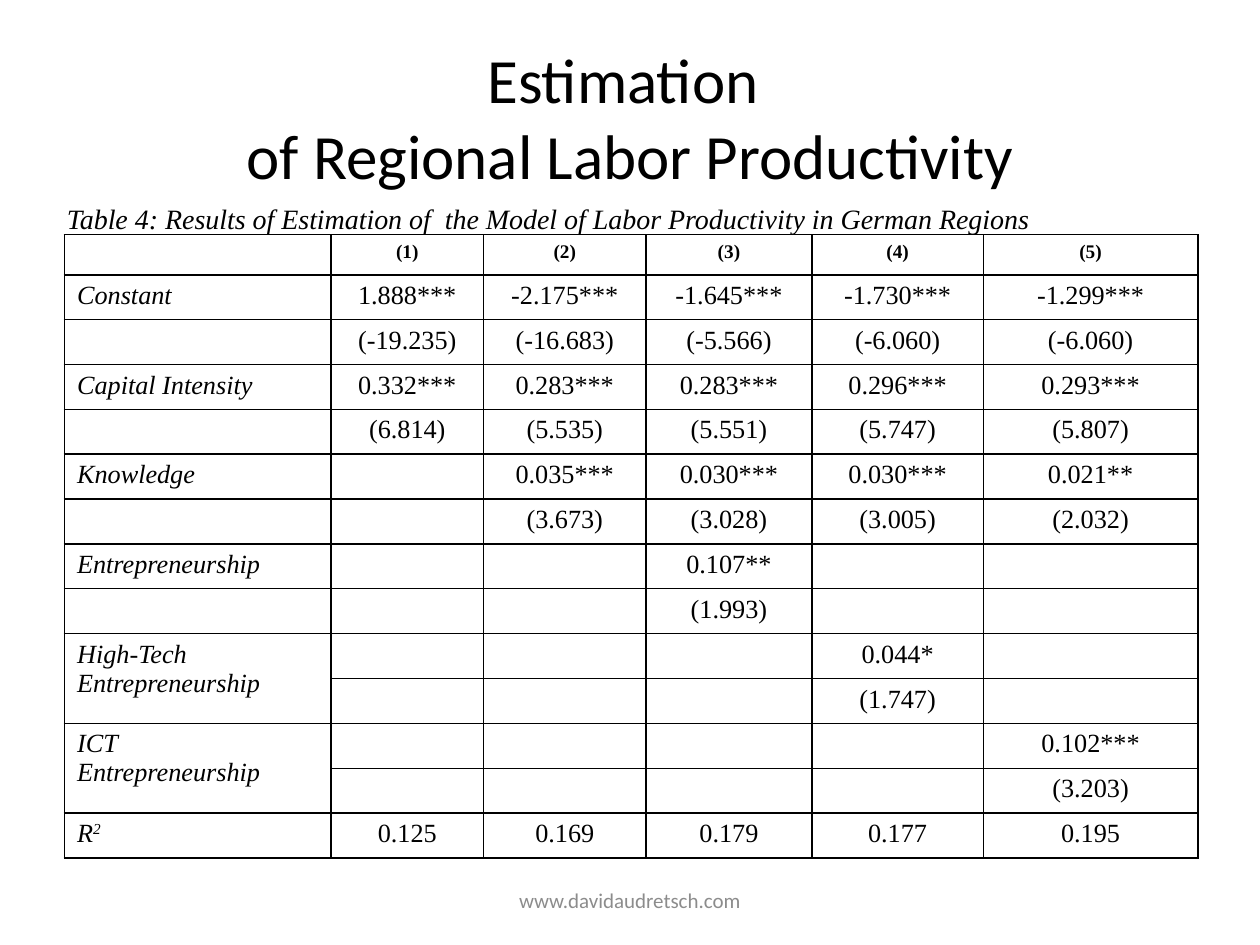
from dataclasses import dataclass

from lxml.etree import SubElement
from pptx import Presentation
from pptx.dml.color import RGBColor
from pptx.enum.text import MSO_ANCHOR, PP_ALIGN
from pptx.oxml.ns import qn
from pptx.util import Cm, Pt


@dataclass(frozen=True)
class Theme:
    black: RGBColor = RGBColor(0x00, 0x00, 0x00)
    gray: RGBColor = RGBColor(0x8C, 0x8C, 0x8C)
    sans: str = "Calibri"
    serif: str = "Times New Roman"
    title_size: float = 36
    caption_size: float = 16
    body_size: float = 15
    footer_size: float = 12
    header_size: float = 11
    thick: float = 1
    thin: float = 0.75


@dataclass(frozen=True)
class TextStyle:
    font_name: str
    size: float
    color: RGBColor
    alignment: PP_ALIGN
    bold: bool = False
    italic: bool = False


@dataclass(frozen=True)
class Label:
    text: str
    left: float
    top: float
    width: float
    height: float
    style: TextStyle


@dataclass(frozen=True)
class Estimate:
    name: str
    coefficients: tuple[str, ...]
    t_values: tuple[str, ...]
    merged: bool = False


THEME = Theme()
HEADER = TextStyle(THEME.serif, THEME.header_size, THEME.black, PP_ALIGN.CENTER, bold=True)
NAME = TextStyle(THEME.serif, THEME.body_size, THEME.black, PP_ALIGN.JUSTIFY, italic=True)
VALUE = TextStyle(THEME.serif, THEME.body_size, THEME.black, PP_ALIGN.CENTER)

LABELS = (
    Label("www.davidaudretsch.com", 8.68, 17.65, 8.04, 1.01,
          TextStyle(THEME.sans, THEME.footer_size, THEME.gray, PP_ALIGN.CENTER)),
    Label("Estimation \vof Regional Labor Productivity", 1.27, 0.76, 22.86, 3.18,
          TextStyle(THEME.sans, THEME.title_size, THEME.black, PP_ALIGN.CENTER)),
    Label("Table 4: Results of Estimation of  the Model of Labor Productivity in German Regions",
          1.1, 3.94, 22.86, 0.94,
          TextStyle(THEME.serif, THEME.caption_size, THEME.black, PP_ALIGN.LEFT, italic=True)),
)

MODELS = ("(1)", "(2)", "(3)", "(4)", "(5)")
ESTIMATES = (
    Estimate("Constant",
             ("1.888***", "-2.175***", "-1.645***", "-1.730***", "-1.299***"),
             ("(-19.235)", "(-16.683)", "(-5.566)", "(-6.060)", "(-6.060)")),
    Estimate("Capital Intensity",
             ("0.332***", "0.283***", "0.283***", "0.296***", "0.293***"),
             ("(6.814)", "(5.535)", "(5.551)", "(5.747)", "(5.807)")),
    Estimate("Knowledge",
             ("", "0.035***", "0.030***", "0.030***", "0.021**"),
             ("", "(3.673)", "(3.028)", "(3.005)", "(2.032)")),
    Estimate("Entrepreneurship",
             ("", "", "0.107**", "", ""), ("", "", "(1.993)", "", "")),
    Estimate("High-Tech\nEntrepreneurship",
             ("", "", "", "0.044*", ""), ("", "", "", "(1.747)", ""), merged=True),
    Estimate("ICT\nEntrepreneurship",
             ("", "", "", "", "0.102***"), ("", "", "", "", "(3.203)"), merged=True),
)
R_SQUARED = ("0.125", "0.169", "0.179", "0.177", "0.195")

TABLE_LEFT, TABLE_TOP, TABLE_HEIGHT = 1.3, 4.73, 12.57
HEADER_HEIGHT = 0.81
COLUMN_WIDTHS = (5.37, 3.08, 3.27, 3.35, 3.45, 4.33)
COLUMN_EDGES = (THEME.thick, THEME.thick, THEME.thin, THEME.thick,
                THEME.thin, THEME.thin, THEME.thick)


def write_text(text_frame, text: str, style: TextStyle) -> None:
    text_frame.text = text
    for paragraph in text_frame.paragraphs:
        paragraph.alignment = style.alignment
        font = paragraph.font
        font.name, font.size = style.font_name, Pt(style.size)
        font.bold, font.italic = style.bold, style.italic
        font.color.rgb = style.color
        if not text:
            paragraph._p.get_or_add_endParaRPr().set("sz", str(int(style.size * 100)))


def add_label(slide, label: Label) -> None:
    shape = slide.shapes.add_textbox(
        Cm(label.left), Cm(label.top), Cm(label.width), Cm(label.height))
    shape.text_frame.word_wrap = True
    shape.text_frame.vertical_anchor = MSO_ANCHOR.MIDDLE
    write_text(shape.text_frame, label.text, label.style)


def draw_borders(cell, weights: dict[str, float]) -> None:
    properties = cell._tc.get_or_add_tcPr()
    for position, (side, weight) in enumerate(weights.items()):
        line = properties.makeelement(qn(f"a:{side}"), {"w": str(Pt(weight))})
        fill = SubElement(line, qn("a:solidFill"))
        SubElement(fill, qn("a:srgbClr"), {"val": str(THEME.black)})
        properties.insert(position, line)


def table_rows() -> list[tuple[str, ...]]:
    rows = [("", *MODELS)]
    for estimate in ESTIMATES:
        rows += [(estimate.name, *estimate.coefficients), ("", *estimate.t_values)]
    return rows + [("R", *R_SQUARED)]


def edge_weight(edge: int, row_count: int) -> float:
    return THEME.thick if edge % 2 or edge == row_count else THEME.thin


def add_results_table(slide) -> None:
    rows = table_rows()
    row_count = len(rows)
    table = slide.shapes.add_table(
        row_count, len(COLUMN_WIDTHS), Cm(TABLE_LEFT), Cm(TABLE_TOP),
        Cm(sum(COLUMN_WIDTHS)), Cm(TABLE_HEIGHT)).table
    table.first_row = table.horz_banding = False
    for column, width in zip(table.columns, COLUMN_WIDTHS):
        column.width = Cm(width)
    body_height = Cm((TABLE_HEIGHT - HEADER_HEIGHT) / (row_count - 1))
    for row_index, values in enumerate(rows):
        table.rows[row_index].height = body_height if row_index else Cm(HEADER_HEIGHT)
        for column_index, value in enumerate(values):
            cell = table.cell(row_index, column_index)
            style = HEADER if row_index == 0 else VALUE if column_index else NAME
            write_text(cell.text_frame, value, style)
            cell.fill.background()
            draw_borders(cell, {
                "lnL": COLUMN_EDGES[column_index],
                "lnR": COLUMN_EDGES[column_index + 1],
                "lnT": edge_weight(row_index, row_count),
                "lnB": edge_weight(row_index + 1, row_count)})
    for index, estimate in enumerate(ESTIMATES):
        if estimate.merged:
            first_row = 2 * index + 1
            table.cell(first_row, 0).merge(table.cell(first_row + 1, 0))
    exponent = table.cell(row_count - 1, 0).text_frame.paragraphs[0].add_run()
    exponent.text = "2"
    exponent._r.get_or_add_rPr().set("baseline", "30000")


def main() -> None:
    """Build the regional labor productivity slide."""
    presentation = Presentation()
    presentation.slide_width, presentation.slide_height = Cm(25.4), Cm(19.05)
    slide = presentation.slides.add_slide(presentation.slide_layouts[6])
    for label in LABELS:
        add_label(slide, label)
    add_results_table(slide)
    presentation.save("out.pptx")


if __name__ == "__main__":
    main()
